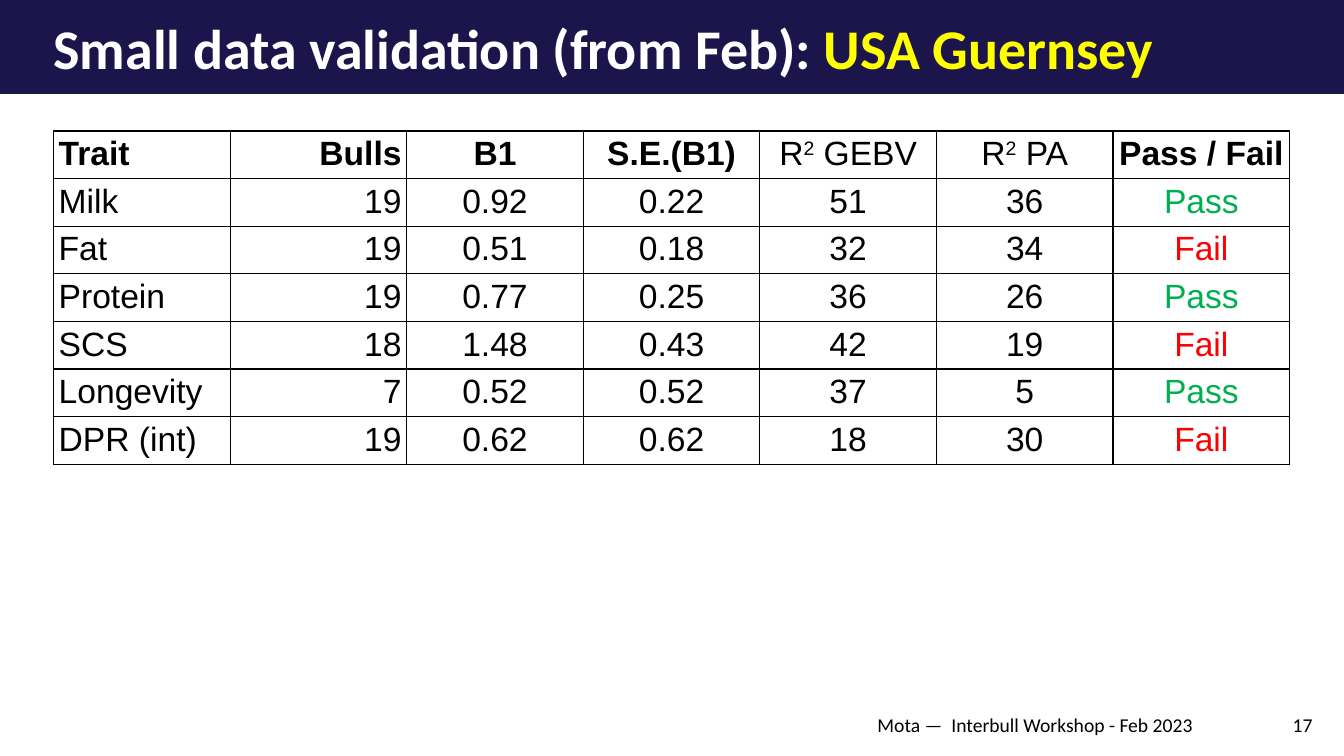
from lxml import etree
from pptx import Presentation
from pptx.dml.color import RGBColor
from pptx.enum import shapes, text
from pptx.oxml import ns
from pptx.util import Cm, Pt

ALIGN = text.PP_ALIGN
BLACK, WHITE, NAVY, YELLOW = "000000", "FFFFFF", "1B154B", "FFFF00"
MARKS = {"Pass": "00B050", "Fail": "FF0000"}
HEADS = ["Trait", "Bulls", "B1", "S.E.(B1)", "R² GEBV", "R² PA", "Pass / Fail"]
ROWS = [
    ["Milk", "19", "0.92", "0.22", "51", "36", "Pass"],
    ["Fat", "19", "0.51", "0.18", "32", "34", "Fail"],
    ["Protein", "19", "0.77", "0.25", "36", "26", "Pass"],
    ["SCS", "18", "1.48", "0.43", "42", "19", "Fail"],
    ["Longevity", "7", "0.52", "0.52", "37", "5", "Pass"],
    ["DPR (int)", "19", "0.62", "0.62", "18", "30", "Fail"],
]
SIDES = [ALIGN.LEFT, ALIGN.RIGHT] + [ALIGN.CENTER] * 5


def paint(part, tint):
    part.solid()
    part.fore_color.rgb = RGBColor.from_string(tint)


def add_run(para, words, size, face="Calibri", tint=BLACK, bold=False):
    run = para.add_run()
    run.text = words
    font = run.font
    font.size, font.name, font.bold = Pt(size), face, bold
    paint(font.fill, tint)
    return run


def set_frame(frame, inset, wrap=True):
    frame.margin_left = frame.margin_right = Cm(inset)
    frame.margin_top = frame.margin_bottom = Cm(inset)
    frame.vertical_anchor = text.MSO_ANCHOR.MIDDLE
    frame.word_wrap = wrap
    return frame.paragraphs[0]


def add_title(slide, parts):
    title = slide.shapes.title
    title.left, title.top = Cm(1.35), Cm(0.3)
    title.width, title.height = Cm(31.16), Cm(1.78)
    para = set_frame(title.text_frame, 0)
    title.text_frame.auto_size = text.MSO_AUTO_SIZE.NONE
    para.alignment = ALIGN.LEFT
    for words, tint in parts:
        add_run(para, words, 40, tint=tint, bold=True)


def add_bar(slide, width):
    bar = slide.shapes.add_shape(
        shapes.MSO_SHAPE.RECTANGLE, 0, 0, width, Cm(2.37))
    bar.shadow.inherit = False
    paint(bar.fill, NAVY)
    bar.line.fill.background()
    slide.shapes.title.element.addprevious(bar.element)


def add_note(slide, words, left, width, side, wrap):
    box = slide.shapes.add_textbox(Cm(left), Cm(17.86), Cm(width), Cm(0.79))
    para = set_frame(box.text_frame, 0.13, wrap)
    para.alignment = side
    add_run(para, words, 14)


def add_rules(cell):
    props = cell._tc.get_or_add_tcPr()
    for edge in "LRTB":
        rule = etree.SubElement(props, ns.qn("a:ln" + edge), w=str(Pt(1)))
        fill = etree.SubElement(rule, ns.qn("a:solidFill"))
        etree.SubElement(fill, ns.qn("a:srgbClr"), val=BLACK)


def fill_cell(cell, words, side, head):
    add_rules(cell)
    paint(cell.fill, WHITE)
    cell.margin_left = cell.margin_right = Cm(0.13)
    cell.margin_top = cell.margin_bottom = Cm(0.11)
    para = cell.text_frame.paragraphs[0]
    para.alignment = side
    base, power, rest = words.partition("²")
    bold = head and not power
    tint = MARKS.get(words, BLACK)
    add_run(para, base, 24, "Arial", tint, bold)
    if power:
        run = add_run(para, "2", 24, "Arial", tint, bold)
        run.font._element.set("baseline", "30000")
        add_run(para, rest, 24, "Arial", tint, bold)


def add_grid(slide, rows):
    wide, high = Cm(4.45), Cm(1.2)
    count = len(HEADS)
    grid = slide.shapes.add_table(
        len(rows), count, Cm(1.35), Cm(3.3),
        wide * count, high * len(rows)).table
    grid.first_row = grid.horz_banding = False
    for col in grid.columns:
        col.width = wide
    for r, row in enumerate(rows):
        grid.rows[r].height = high
        for c, words in enumerate(row):
            fill_cell(grid.cell(r, c), words, SIDES[c], r == 0)


def main():
    deck = Presentation()
    deck.slide_width, deck.slide_height = Cm(33.87), Cm(19.05)
    slide = deck.slides.add_slide(deck.slide_layouts[5])
    add_bar(slide, deck.slide_width)
    add_title(slide, [("Small data validation (from Feb): ", WHITE),
                      ("USA Guernsey", YELLOW)])
    add_grid(slide, [HEADS] + ROWS)
    add_note(slide, "Mota —  Interbull Workshop - Feb 2023",
             20.5, 11.18, ALIGN.CENTER, True)
    add_note(slide, "17", 32.41, 0.8, ALIGN.RIGHT, False)
    deck.save("out.pptx")


if __name__ == "__main__":
    main()
